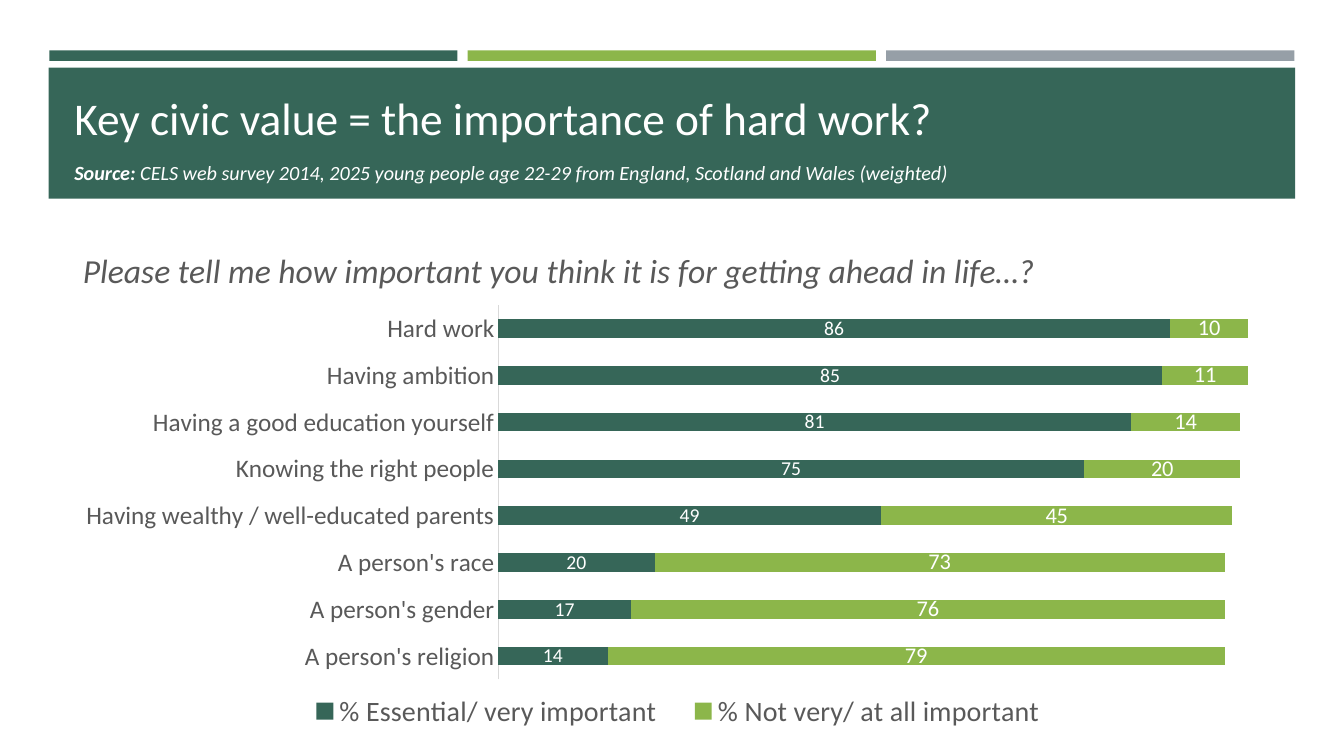
from lxml import etree
from pptx import Presentation
from pptx.chart.data import CategoryChartData
from pptx.dml.color import RGBColor
from pptx.enum.chart import XL_CHART_TYPE as ChartType, XL_LABEL_POSITION as LabelPosition
from pptx.enum.chart import XL_LEGEND_POSITION as LegendPosition, XL_TICK_MARK as TickMark
from pptx.enum.shapes import MSO_SHAPE as Shape
from pptx.enum.text import MSO_ANCHOR as Anchor
from pptx.oxml.ns import qn
from pptx.util import Pt

GREEN = RGBColor(0x36, 0x66, 0x58)
LIME = RGBColor(0x8C, 0xB6, 0x4A)
STEEL = RGBColor(0x96, 0x9F, 0xA7)
GREY = RGBColor(0x59, 0x59, 0x59)
PALE = RGBColor(0xD9, 0xD9, 0xD9)
WHITE = RGBColor(0xFF, 0xFF, 0xFF)
FONT = "Calibri"


def style(font, size, color, bold=False, italic=False):
    font.name = FONT
    font.size = Pt(size)
    font.color.rgb = color
    font.bold = bold
    font.italic = italic


def place(element, before, settings):
    for old in element.findall(qn("c:layout")):
        element.remove(old)
    layout = etree.Element(qn("c:layout"))
    manual = etree.SubElement(layout, qn("c:manualLayout"))
    for tag, value in settings.items():
        etree.SubElement(manual, qn(f"c:{tag}")).set("val", str(value))
    element.find(qn(before)).addprevious(layout)


deck = Presentation()
deck.slide_width = Pt(960)
deck.slide_height = Pt(540)
page = deck.slides.add_slide(deck.slide_layouts[6])

bands = [(35.2 + 298.9 * i, 36, 291.6, 7.5, color)
         for i, color in enumerate([GREEN, LIME, STEEL])]
bands.append((34.8, 48.3, 890.4, 93.7, GREEN))
for left, top, width, height, color in bands:
    band = page.shapes.add_shape(Shape.RECTANGLE, Pt(left), Pt(top), Pt(width), Pt(height))
    band.shadow.inherit = False
    band.fill.solid()
    band.fill.fore_color.rgb = color
    band.line.fill.background()

box = page.shapes.add_textbox(Pt(46), Pt(55.4), Pt(868), Pt(80))
frame = box.text_frame
frame.word_wrap = True
frame.vertical_anchor = Anchor.BOTTOM
heading = [
    (0, [("Key civic value = the importance of hard work?", 32.4, False, False)]),
    (11.5, [("Source: ", 14.4, True, True),
            ("CELS web survey 2014, 2025 young people age 22-29 from England, "
             "Scotland and Wales (weighted)", 14.4, False, True)]),
]
for i, (gap, spans) in enumerate(heading):
    para = frame.add_paragraph() if i else frame.paragraphs[0]
    para.space_before = Pt(gap)
    for text, size, bold, italic in spans:
        span = para.add_run()
        span.text = text
        style(span.font, size, WHITE, bold, italic)

answers = [
    ("A person's religion", 14, 79),
    ("A person's gender", 17, 76),
    ("A person's race", 20, 73),
    ("Having wealthy / well-educated parents", 49, 45),
    ("Knowing the right people", 75, 20),
    ("Having a good education yourself", 81, 14),
    ("Having ambition", 85, 11),
    ("Hard work", 86, 10),
]
names, essential, unimportant = zip(*answers)
data = CategoryChartData(number_format="0")
data.categories = names
data.add_series("% Essential/ very important", essential)
data.add_series("% Not very/ at all important", unimportant)
chart = page.shapes.add_chart(ChartType.BAR_STACKED, Pt(46), Pt(154), Pt(885.6), Pt(376.6), data).chart
style(chart.font, 10, GREY)

chart.has_title = True
span = chart.chart_title.text_frame.paragraphs[0].add_run()
span.text = "Please tell me how important you think it is for getting ahead in life…?"
style(span.font, 24, GREY, italic=True)
chart.chart_title.include_in_layout = False

chart.has_legend = True
legend = chart.legend
legend.position = LegendPosition.BOTTOM
legend.include_in_layout = False
style(legend.font, 20, GREY)

names_axis = chart.category_axis
names_axis.major_tick_mark = TickMark.NONE
names_axis.minor_tick_mark = TickMark.NONE
names_axis.format.line.color.rgb = PALE
names_axis.format.line.width = Pt(0.75)
style(names_axis.tick_labels.font, 18, GREY)

values_axis = chart.value_axis
values_axis.minimum_scale = 0
values_axis.maximum_scale = 100
values_axis.has_major_gridlines = False
values_axis.visible = False

plot = chart.plots[0]
plot.gap_width = 150
plot.overlap = 100
plot.vary_by_categories = False
for series, color, size in zip(plot.series, [GREEN, LIME], [14, 16]):
    series.format.fill.solid()
    series.format.fill.fore_color.rgb = color
    labels = series.data_labels
    labels.show_value = True
    labels.number_format = "0"
    labels.number_format_is_linked = False
    labels.position = LabelPosition.CENTER
    style(labels.font, size, WHITE)

edges = {"xMode": "edge", "yMode": "edge"}
title_xml = chart.chart_title._element
place(title_xml, "c:overlay", edges | {"x": 0.01, "y": 0.05})
place(legend._element, "c:overlay", edges | {"x": 0.18, "y": 0.89, "w": 0.63, "h": 0.1})
plot_area = chart._chartSpace.chart.plotArea
place(plot_area, "c:barChart",
      {"layoutTarget": "inner"} | edges | {"x": 0.35, "y": 0.17, "w": 0.63, "h": 0.71})

deck.save("out.pptx")
